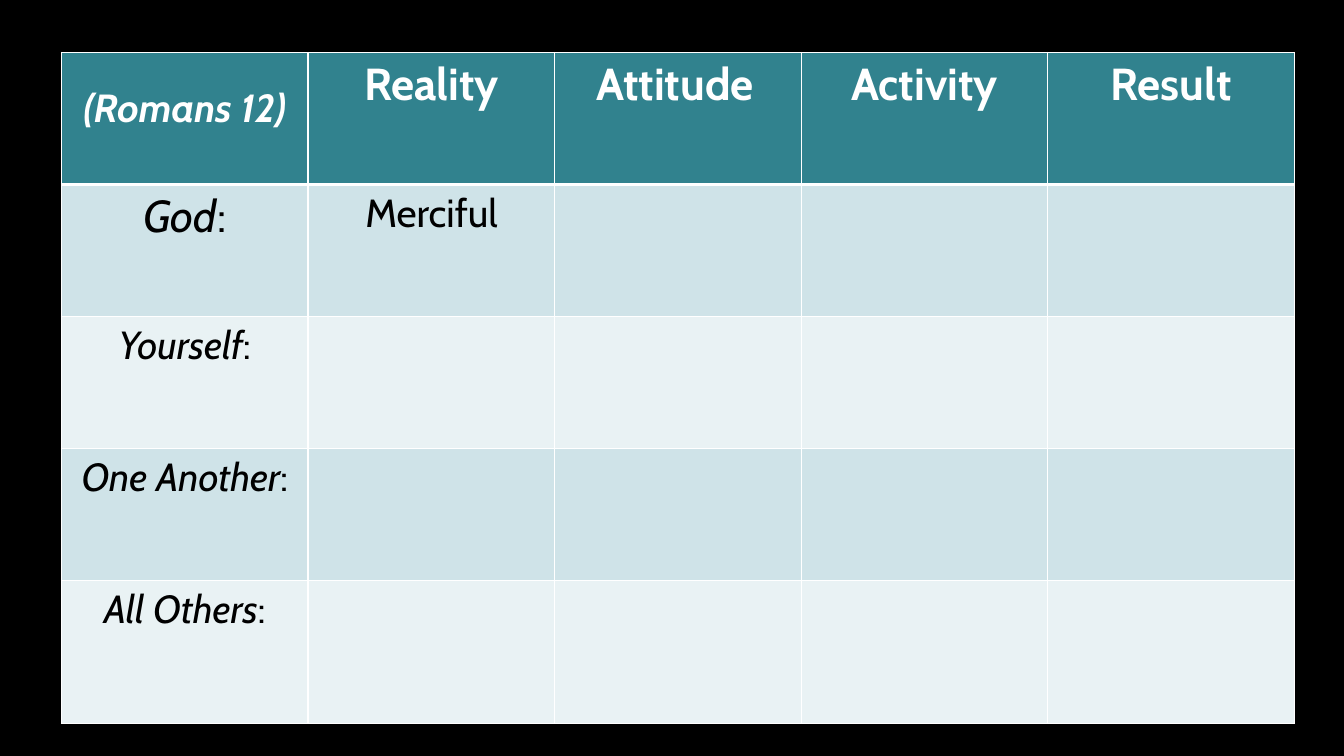
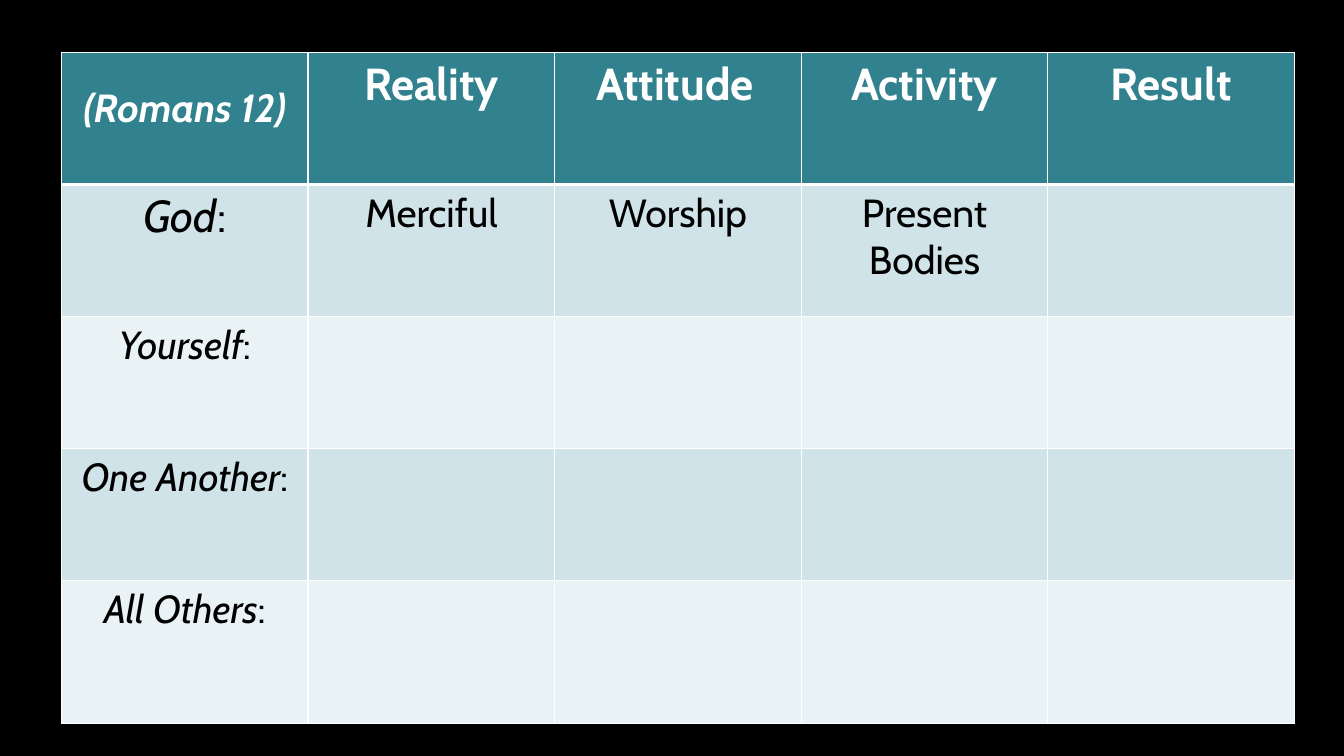
from dataclasses import dataclass

from lxml.etree import SubElement
from pptx import Presentation
from pptx.dml.color import RGBColor
from pptx.enum.text import PP_ALIGN
from pptx.oxml.ns import qn
from pptx.slide import Slide
from pptx.table import _Cell
from pptx.util import Inches, Pt

FONT = "Cabin"
BACKDROP = "000000"
HEADER_FILL = "31828E"
BAND_FILLS = ("CFE3E8", "E9F2F4")
HEADER_INK = "FFFFFF"
BODY_INK = "000000"
RULE = "FFFFFF"

LEFT, TOP, WIDTH = 0.61, 0.52, 12.23
ROW_HEIGHTS = (1.31, 1.31, 1.31, 1.31, 1.42)
THIN_RULE, HEADER_RULE = 1, 3
REFERENCE_MARGIN = 0.32


@dataclass(frozen=True)
class Words:
    """A run of text with its size and slant."""

    text: str
    size: int = 28
    italic: bool = False


Entry = tuple[Words, ...]

HEADINGS: list[Entry] = [
    (Words("(Romans 12)", italic=True),),
    (Words("Reality", 32),),
    (Words("Attitude", 32), Words(" ", 18)),
    (Words("Activity", 32),),
    (Words("Result", 32),),
]
RELATIONSHIPS = (("God", 32), ("Yourself", 28), ("One Another", 28), ("All Others", 28))
GOD_ANSWERS = (("Merciful",), ("Merciful", "Worship", "Present Bodies"))


def rgb(hex_colour: str) -> RGBColor:
    """Turn a hex string into a colour."""
    return RGBColor.from_string(hex_colour)


def rule_cell(cell: _Cell, top: float, bottom: float) -> None:
    """Draw the four borders of a cell."""
    properties = cell._tc.get_or_add_tcPr()
    widths = {"a:lnL": THIN_RULE, "a:lnR": THIN_RULE, "a:lnT": top, "a:lnB": bottom}
    for tag, width in widths.items():
        line = SubElement(properties, qn(tag), w=str(Pt(width)))
        fill = SubElement(line, qn("a:solidFill"))
        SubElement(fill, qn("a:srgbClr"), val=RULE)


def write_entry(cell: _Cell, entry: Entry, ink: str, bold: bool) -> None:
    """Write the centred runs of a cell."""
    paragraph = cell.text_frame.paragraphs[0]
    paragraph.alignment = PP_ALIGN.CENTER
    for words in entry:
        run = paragraph.add_run()
        run.text = words.text
        run.font.name = FONT
        run.font.size = Pt(words.size)
        run.font.bold = bold
        run.font.italic = words.italic
        run.font.color.rgb = rgb(ink)


def grid_rows(god_answers: tuple[str, ...]) -> list[list[Entry]]:
    """Combine headings, row labels and the answers about God."""
    rows = [HEADINGS]
    for label, size in RELATIONSHIPS:
        rows.append([(Words(label, size, True), Words(":", size))])
    rows[1] = rows[1] + [(Words(answer),) for answer in god_answers]
    return rows


def add_grid(slide: Slide, rows: list[list[Entry]]) -> None:
    """Add the table of relationships to a slide."""
    columns = len(HEADINGS)
    table = slide.shapes.add_table(
        len(rows), columns, Inches(LEFT), Inches(TOP),
        Inches(WIDTH), Inches(sum(ROW_HEIGHTS)),
    ).table
    for column in table.columns:
        column.width = Inches(WIDTH / columns)
    for row_index, (entries, height) in enumerate(zip(rows, ROW_HEIGHTS)):
        table.rows[row_index].height = Inches(height)
        is_header = row_index == 0
        fill = HEADER_FILL if is_header else BAND_FILLS[(row_index - 1) % 2]
        ink = HEADER_INK if is_header else BODY_INK
        top = HEADER_RULE if row_index == 1 else THIN_RULE
        bottom = HEADER_RULE if is_header else THIN_RULE
        for column_index in range(columns):
            cell = table.cell(row_index, column_index)
            rule_cell(cell, top, bottom)
            cell.fill.solid()
            cell.fill.fore_color.rgb = rgb(fill)
            if column_index < len(entries):
                write_entry(cell, entries[column_index], ink, is_header)
    table.cell(0, 0).margin_top = Inches(REFERENCE_MARGIN)


def main() -> None:
    """Build and save the presentation."""
    presentation = Presentation()
    presentation.slide_width = Inches(13.33)
    presentation.slide_height = Inches(7.5)
    for god_answers in GOD_ANSWERS:
        slide = presentation.slides.add_slide(presentation.slide_layouts[6])
        slide.background.fill.solid()
        slide.background.fill.fore_color.rgb = rgb(BACKDROP)
        add_grid(slide, grid_rows(god_answers))
    presentation.save("out.pptx")


if __name__ == "__main__":
    main()
